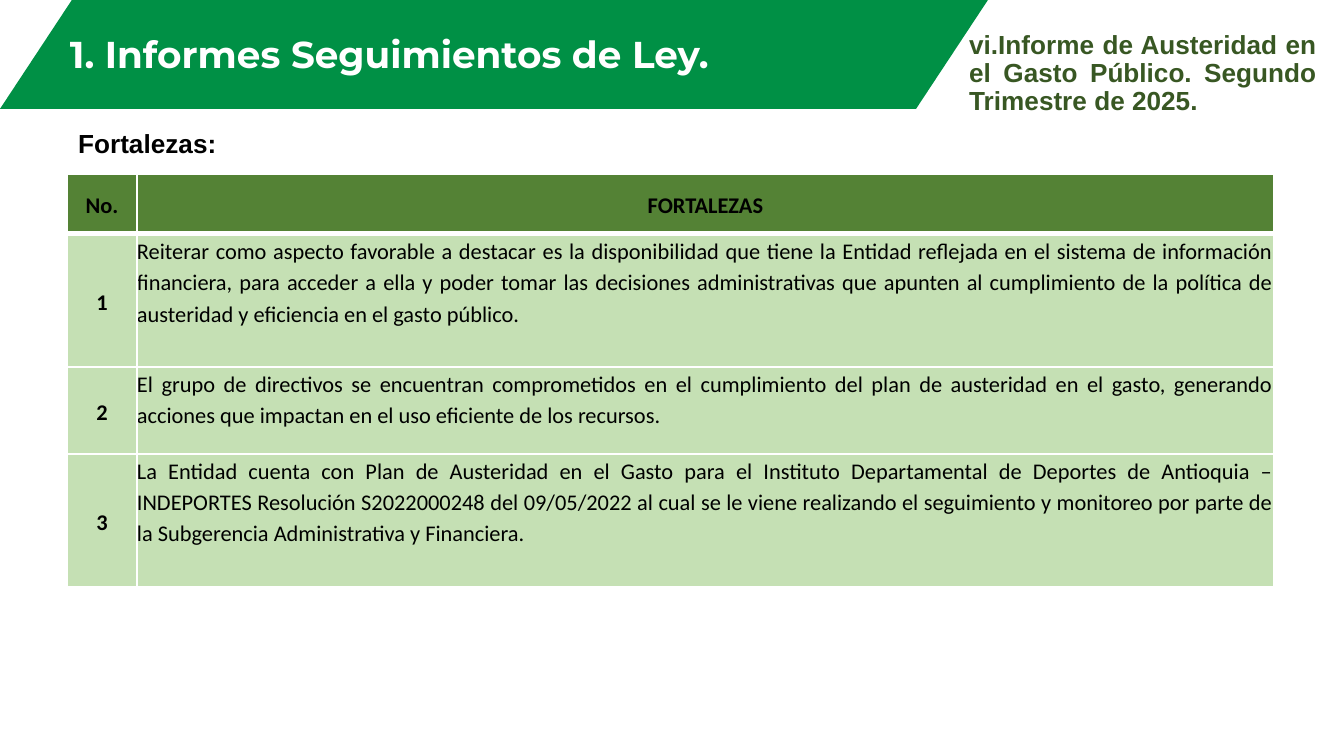
"""Build the slide on the strengths found in the austerity report."""
from dataclasses import dataclass

from lxml.etree import SubElement
from pptx import Presentation
from pptx.dml.color import RGBColor
from pptx.enum.shapes import MSO_SHAPE
from pptx.enum.text import MSO_ANCHOR, MSO_AUTO_SIZE, PP_ALIGN
from pptx.oxml.ns import qn
from pptx.util import Emu, Inches, Pt

PX_PER_INCH = 134.4
COLORS = {
    "band": "009045",
    "header": "548235",
    "row": "C5E0B4",
    "report": "385723",
    "white": "FFFFFF",
    "black": "000000",
}


@dataclass(frozen=True)
class Box:
    left: int
    top: int
    width: int
    height: int

    def emu(self) -> tuple[Emu, Emu, Emu, Emu]:
        return px(self.left), px(self.top), px(self.width), px(self.height)


@dataclass(frozen=True)
class Row:
    number: str
    text: str
    height: int


HEADER = Row("No.", "FORTALEZAS", 60)
STRENGTHS = [
    Row("1", "Reiterar como aspecto favorable a destacar es la disponibilidad que tiene la Entidad "
        "reflejada en el sistema de información financiera, para acceder a ella y poder tomar las "
        "decisiones administrativas que apunten al cumplimiento de la política de austeridad y "
        "eficiencia en el gasto público.", 133),
    Row("2", "El grupo de directivos se encuentran comprometidos en el cumplimiento del plan de "
        "austeridad en el gasto, generando acciones que impactan en el uso eficiente de los "
        "recursos.", 87),
    Row("3", "La Entidad cuenta con Plan de Austeridad en el Gasto para el Instituto Departamental "
        "de Deportes de Antioquia – INDEPORTES Resolución S2022000248 del 09/05/2022 al cual se le "
        "viene realizando el seguimiento y monitoreo por parte de la Subgerencia Administrativa y "
        "Financiera.", 133),
]
COLUMN_WIDTHS = [70, 1137]


def px(length: int) -> Emu:
    return Inches(length / PX_PER_INCH)


def rgb(name: str) -> RGBColor:
    return RGBColor.from_string(COLORS[name])


def write(frame, text: str, *, font: str = "Arial", size: int = 14, color: str = "black",
          bold: bool = True, align=PP_ALIGN.JUSTIFY, spacing: float = 1.0, after: int = 0) -> None:
    frame.word_wrap = True
    paragraph = frame.paragraphs[0]
    paragraph.alignment = align
    paragraph.line_spacing = spacing
    paragraph.space_before = Pt(0)
    paragraph.space_after = Pt(after)
    run = paragraph.add_run()
    run.text = text
    run.font.name = font
    run.font.size = Pt(size)
    run.font.bold = bold
    run.font.color.rgb = rgb(color)


def add_text(slide, box: Box, text: str, **style) -> None:
    write(slide.shapes.add_textbox(*box.emu()).text_frame, text, **style)


def add_title(slide, box: Box, text: str) -> None:
    title = slide.shapes.title
    title.left, title.top, title.width, title.height = box.emu()
    frame = title.text_frame
    frame.auto_size = MSO_AUTO_SIZE.NONE
    frame.vertical_anchor = MSO_ANCHOR.BOTTOM
    write(frame, text, font="Montserrat", size=20, color="white", align=PP_ALIGN.CENTER, spacing=0.9)


def add_band(slide, box: Box) -> None:
    band = slide.shapes.add_shape(MSO_SHAPE.PARALLELOGRAM, *box.emu())
    band.adjustments[0] = 0.66
    band.shadow.inherit = False
    band.fill.solid()
    band.fill.fore_color.rgb = rgb("band")
    band.line.fill.background()
    slide.shapes.title.element.addprevious(band.element)


def set_borders(cell, top: int, bottom: int) -> None:
    properties = cell._tc.get_or_add_tcPr()
    widths = {"a:lnL": 1, "a:lnR": 1, "a:lnT": top, "a:lnB": bottom}
    for position, (tag, width) in enumerate(widths.items()):
        line = SubElement(properties, qn(tag), w=str(Pt(width)))
        fill = SubElement(line, qn("a:solidFill"))
        SubElement(fill, qn("a:srgbClr"), val=COLORS["white"])
        properties.insert(position, line)


def fill_cell(cell, text: str, row: int, column: int) -> None:
    is_header = row == 0
    is_label = is_header or column == 0
    cell.margin_left = cell.margin_right = cell.margin_top = cell.margin_bottom = 0
    cell.vertical_anchor = MSO_ANCHOR.MIDDLE if is_label else MSO_ANCHOR.TOP
    cell.fill.solid()
    cell.fill.fore_color.rgb = rgb("header" if is_header else "row")
    set_borders(cell, top=3 if row == 1 else 1, bottom=3 if is_header else 1)
    write(cell.text_frame, text, font="Calibri", size=12, bold=is_label,
          align=PP_ALIGN.CENTER if is_label else PP_ALIGN.JUSTIFY, spacing=1.15, after=6)


def add_strengths(slide, left: int, top: int) -> None:
    rows = [HEADER, *STRENGTHS]
    box = Box(left, top, sum(COLUMN_WIDTHS), sum(row.height for row in rows))
    table = slide.shapes.add_table(len(rows), len(COLUMN_WIDTHS), *box.emu()).table
    table.horz_banding = False
    for column, width in zip(table.columns, COLUMN_WIDTHS):
        column.width = px(width)
    for r, row in enumerate(rows):
        table.rows[r].height = px(row.height)
        for c, text in enumerate((row.number, row.text)):
            fill_cell(table.cell(r, c), text, r, c)


def main() -> None:
    deck = Presentation()
    deck.slide_width, deck.slide_height = px(1344), px(756)
    slide = deck.slides.add_slide(deck.slide_layouts[5])
    add_title(slide, Box(0, 25, 779, 58), "1. Informes Seguimientos de Ley.")
    add_band(slide, Box(0, 0, 988, 109))
    add_text(slide, Box(956, 25, 374, 99),
             "vi.Informe de Austeridad en el Gasto Público. Segundo Trimestre de 2025.",
             color="report", spacing=0.9)
    add_text(slide, Box(65, 121, 180, 46), "Fortalezas:")
    add_strengths(slide, left=67, top=174)
    deck.save("out.pptx")


if __name__ == "__main__":
    main()
